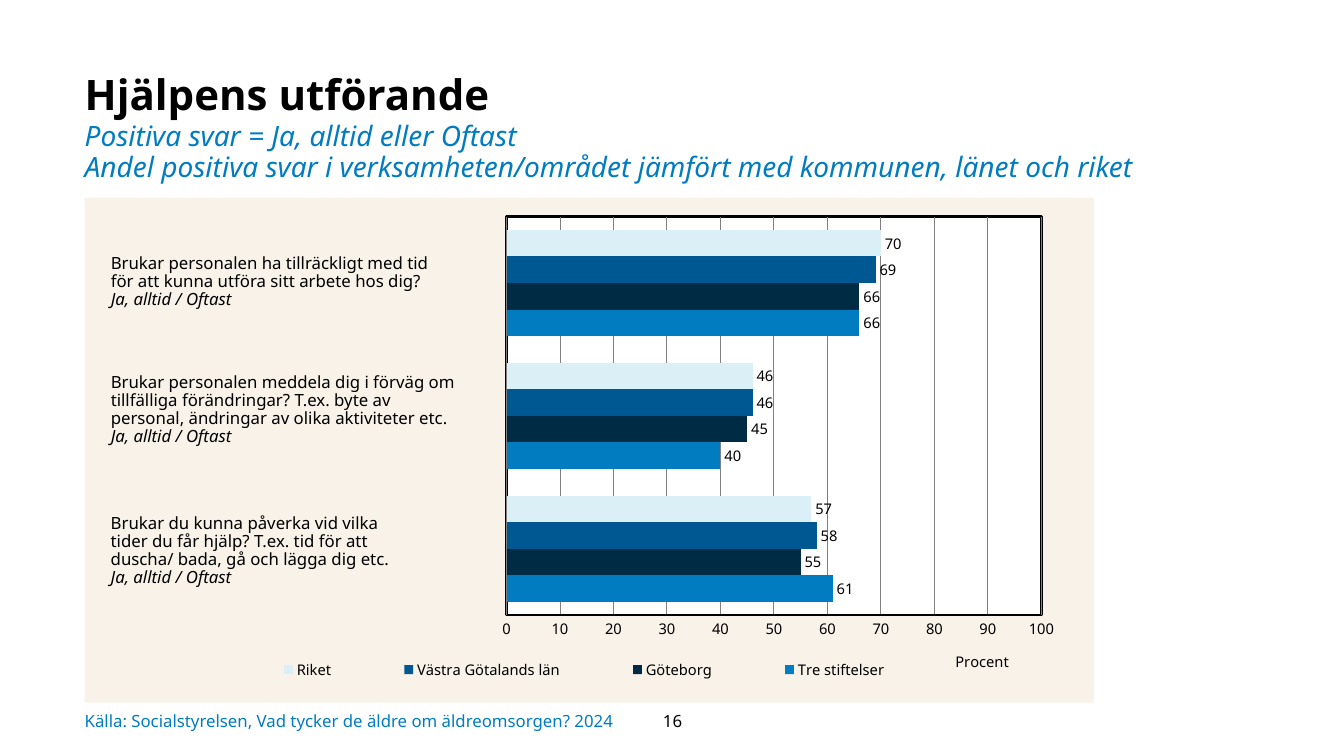
import pptx
import pptx.chart.data
import pptx.dml.color
import pptx.enum.chart
import pptx.enum.text
import pptx.oxml
import pptx.oxml.ns
import pptx.util
from dataclasses import dataclass

Inches, Pt = pptx.util.Inches, pptx.util.Pt
Align, Anchor = pptx.enum.text.PP_ALIGN, pptx.enum.text.MSO_ANCHOR
Kinds = pptx.enum.chart
qn = pptx.oxml.ns.qn


@dataclass(frozen=True)
class Theme:
    font: str = "Noto Sans"
    black: str = "000000"
    blue: str = "017CC1"
    navy: str = "002B45"
    mid: str = "005892"
    pale: str = "DBF0F6"
    sand: str = "F8F2E8"
    white: str = "FFFFFF"
    grid: str = "808080"
    head: float = 30
    sub: float = 20
    body: float = 12
    small: float = 10.5


def rgb(code):
    return pptx.dml.color.RGBColor.from_string(code)


def place(host, index, **sides):
    """Set a manual chart layout, in fractions of the chart area."""
    old = host.find(qn("c:layout"))
    if old is not None:
        host.remove(old)
    inner = '<c:layoutTarget val="inner"/>' if host.tag == qn("c:plotArea") else ""
    modes = "".join(f'<c:{s}Mode val="edge"/>' for s in "xy")
    sizes = "".join(f'<c:{s} val="{v}"/>' for s, v in sides.items())
    host.insert(index, pptx.oxml.parse_xml(
        f'<c:layout {pptx.oxml.ns.nsdecls("c")}><c:manualLayout>'
        f"{inner}{modes}{sizes}</c:manualLayout></c:layout>"))


def area(fill, line=None, width=0):
    """Return shape properties for a chart area or a plot area."""
    def solid(code):
        return f'<a:solidFill><a:srgbClr val="{code}"/></a:solidFill>'
    edge = solid(line) if line else "<a:noFill/>"
    return pptx.oxml.parse_xml(
        f'<c:spPr {pptx.oxml.ns.nsdecls("c", "a")}>{solid(fill)}'
        f'<a:ln w="{Pt(width)}">{edge}</a:ln></c:spPr>')


class Deck:
    def __init__(self, theme):
        self.theme = theme
        self.file = pptx.Presentation()
        self.file.slide_width = Inches(13.33)
        self.file.slide_height = Inches(7.5)
        self.slide = self.file.slides.add_slide(self.file.slide_layouts[6])

    def style(self, font, size, color=None, bold=False, slant=False):
        font.name, font.size = self.theme.font, Pt(size)
        font.bold, font.italic = bold, slant
        font.color.rgb = rgb(color or self.theme.black)

    def text(self, box, lines, space=1.0, align=Align.LEFT,
             anchor=Anchor.TOP, inset=0.1):
        """Add a text box; each line is (text, size, color, bold, slant)."""
        frame = self.slide.shapes.add_textbox(*map(Inches, box)).text_frame
        frame.word_wrap = True
        frame.vertical_anchor = anchor
        frame.margin_left = frame.margin_right = Inches(inset)
        frame.margin_top = frame.margin_bottom = Inches(inset / 2)
        for i, (words, *look) in enumerate(lines):
            para = frame.add_paragraph() if i else frame.paragraphs[0]
            para.alignment, para.line_spacing = align, space
            run = para.add_run()
            run.text = words
            self.style(run.font, *look)

    def bars(self, box, cats, series, title):
        """Add the bar chart; each series is (name, values, color)."""
        look = self.theme
        data = pptx.chart.data.CategoryChartData()
        data.categories = cats
        for name, vals, _ in series:
            data.add_series(name, vals)
        chart = self.slide.shapes.add_chart(
            Kinds.XL_CHART_TYPE.BAR_CLUSTERED, *map(Inches, box), data).chart
        chart.has_title = False
        self.style(chart.font, look.small)
        root = chart.element
        root.find(qn("c:txPr")).addprevious(area(look.sand))
        region = root.find(qn("c:chart")).find(qn("c:plotArea"))
        region.append(area(look.white, look.black, 2))
        place(region, 0, x=0.418, y=0.038, w=0.53, h=0.789)

        plot = chart.plots[0]
        plot.gap_width, plot.overlap = 100, 0
        plot.vary_by_categories = False
        for item, (_, _, color) in zip(plot.series, series):
            item.format.fill.solid()
            item.format.fill.fore_color.rgb = rgb(color)
            tags = item.data_labels
            tags.show_value = True
            tags.position = Kinds.XL_LABEL_POSITION.OUTSIDE_END
            self.style(tags.font, look.small)

        chart.category_axis.visible = False
        self.scale(chart.value_axis, title)
        chart.has_legend = True
        legend = chart.legend
        legend.position = Kinds.XL_LEGEND_POSITION.BOTTOM
        legend.include_in_layout = False
        self.style(legend.font, look.small)
        place(legend._element, 1, x=0.13, y=0.9, w=0.73, h=0.07)

    def scale(self, axis, title):
        look = self.theme
        axis.minimum_scale, axis.maximum_scale, axis.major_unit = 0, 100, 10
        axis.major_tick_mark = axis.minor_tick_mark = Kinds.XL_TICK_MARK.NONE
        axis.has_major_gridlines = True
        for line, color, width in (
                (axis.major_gridlines.format.line, look.grid, 0.75),
                (axis.format.line, look.black, 2)):
            line.color.rgb, line.width = rgb(color), Pt(width)
        self.style(axis.tick_labels.font, look.small)
        axis.has_title = True
        run = axis.axis_title.text_frame.paragraphs[0].add_run()
        run.text = title
        self.style(run.font, look.small)
        place(axis.axis_title._element, 1, x=0.86, y=0.89)


def main():
    look = Theme()
    deck = Deck(look)
    deck.text((0.84, 0.72, 10.86, 1.21), [
        ("Hjälpens utförande", look.head, look.black, True),
        ("Positiva svar = Ja, alltid eller Oftast",
         look.sub, look.blue, False, True),
        ("Andel positiva svar i verksamheten/området jämfört med kommunen, "
         "länet och riket", look.sub, look.blue, False, True),
    ], space=0.95, inset=0)

    deck.bars((0.84, 1.96, 10.01, 5.01), ["1", "2", "3"], [
        ("Tre stiftelser", (61, 40, 66), look.blue),
        ("Göteborg", (55, 45, 66), look.navy),
        ("Västra Götalands län", (58, 46, 69), look.mid),
        ("Riket", (57, 46, 70), look.pale),
    ], "Procent")

    asks = [
        (2.48, 4.72, ["Brukar personalen ha tillräckligt med tid",
                      "för att kunna utföra sitt arbete hos dig?"]),
        (3.66, 3.72, ["Brukar personalen meddela dig i förväg om tillfälliga "
                      "förändringar? T.ex. byte av personal, ändringar av "
                      "olika aktiviteter etc."]),
        (5.06, 2.97, ["Brukar du kunna påverka vid vilka tider du får hjälp? "
                      "T.ex. tid för att duscha/ bada, gå och lägga dig etc."]),
    ]
    for top, width, lines in asks:
        deck.text((1, top, width, 0.9),
                  [(line, look.body) for line in lines]
                  + [("Ja, alltid / Oftast", look.body, look.black, False, True)],
                  space=0.9)

    deck.text((6.16, 6.95, 1.02, 0.4), [("16", look.body)],
              align=Align.CENTER, anchor=Anchor.MIDDLE)
    deck.text((0.84, 6.95, 9.03, 0.4), [
        ("Källa: Socialstyrelsen, Vad tycker de äldre om äldreomsorgen? 2024",
         look.body, look.blue)], anchor=Anchor.MIDDLE, inset=0)
    deck.file.save("out.pptx")


if __name__ == "__main__":
    main()
